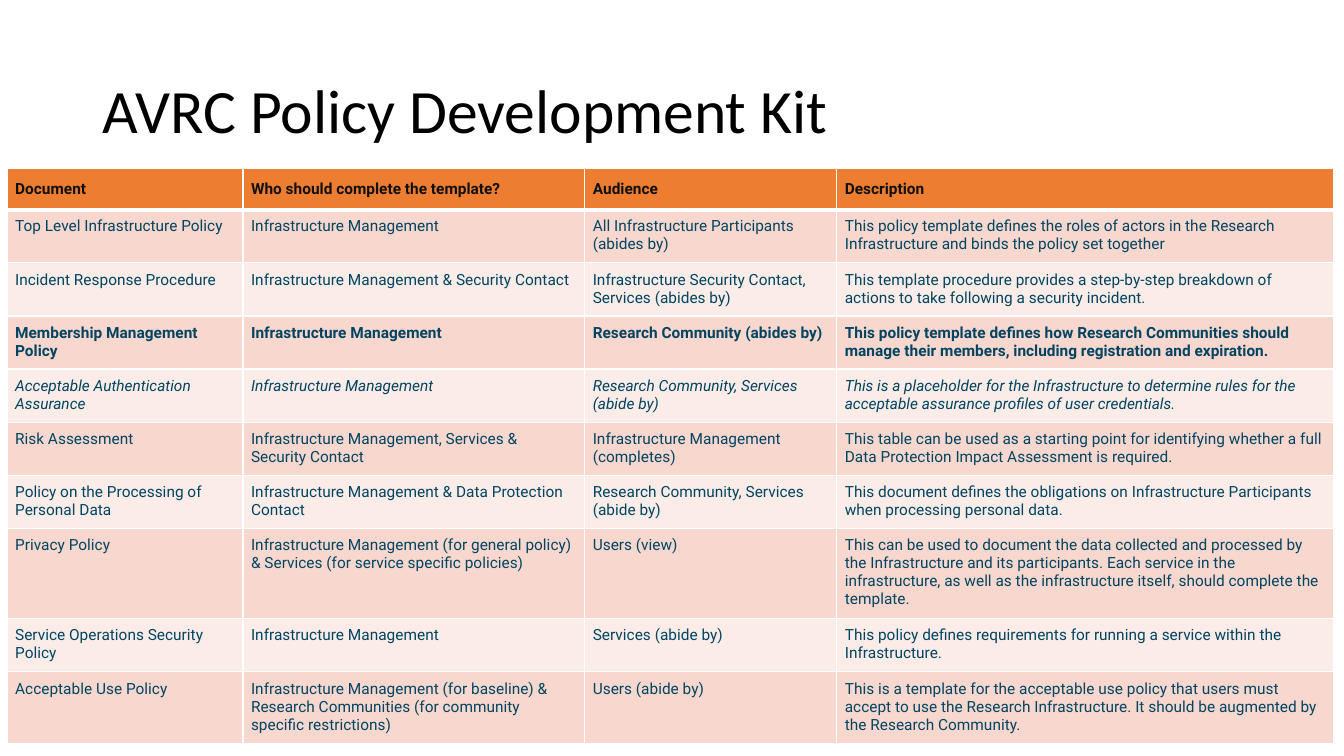
from lxml.etree import SubElement as Sub
from pptx import Presentation
from pptx.dml.color import RGBColor as RGB
from pptx.enum.text import MSO_ANCHOR as Anchor
from pptx.oxml.ns import qn
from pptx.util import Inches, Pt

# Content
TITLE = "AVRC Policy Development Kit"
HEAD = ("Document", "Who should complete the template?", "Audience", "Description")
BODY = [
    ("Top Level Infrastructure Policy",
     "Infrastructure Management",
     "All Infrastructure Participants (abides by)",
     "This policy template defines the roles of actors in the Research "
     "Infrastructure and binds the policy set together"),
    ("Incident Response Procedure",
     "Infrastructure Management & Security Contact",
     "Infrastructure Security Contact, Services (abides by)",
     "This template procedure provides a step-by-step breakdown of actions "
     "to take following a security incident."),
    ("Membership Management Policy",
     "Infrastructure Management",
     "Research Community (abides by)",
     "This policy template defines how Research Communities should manage "
     "their members, including registration and expiration."),
    ("Acceptable Authentication Assurance",
     "Infrastructure Management",
     "Research Community, Services (abide by)",
     "This is a placeholder for the Infrastructure to determine rules for the "
     "acceptable assurance profiles of user credentials."),
    ("Risk Assessment",
     "Infrastructure Management, Services & Security Contact",
     "Infrastructure Management (completes)",
     "This table can be used as a starting point for identifying whether a "
     "full Data Protection Impact Assessment is required."),
    ("Policy on the Processing of Personal Data",
     "Infrastructure Management & Data Protection Contact",
     "Research Community, Services (abide by)",
     "This document defines the obligations on Infrastructure Participants "
     "when processing personal data."),
    ("Privacy Policy",
     "Infrastructure Management (for general policy) & Services "
     "(for service specific policies)",
     "Users (view)",
     "This can be used to document the data collected and processed by the "
     "Infrastructure and its participants. Each service in the "
     "infrastructure, as well as the infrastructure itself, should complete "
     "the template."),
    ("Service Operations Security Policy",
     "Infrastructure Management",
     "Services (abide by)",
     "This policy defines requirements for running a service within the "
     "Infrastructure."),
    ("Acceptable Use Policy",
     "Infrastructure Management (for baseline) & Research Communities "
     "(for community specific restrictions)",
     "Users (abide by)",
     "This is a template for the acceptable use policy that users must accept "
     "to use the Research Infrastructure. It should be augmented by the "
     "Research Community."),
]
BOLD, ITALIC = {0, 3}, {4}  # table rows, header is 0
WIDTHS = (2.34, 3.39, 2.5, 4.93)
ROW, PAD, WIDE = 0.41, 0.08, 0.21

THEME = {
    "title": {"name": "Calibri", "size": Pt(44)},
    "cell": {"name": "Roboto", "size": Pt(11)},
    "black": "000000", "dark": "111111", "text": "004461",
    "head": "ED7D31", "bands": ("FCECE8", "F8D7CE"), "line": "FFFFFF",
}


def style(item, values):
    for key, val in values.items():
        setattr(item, key, val)


def write(frame, text, font, color):
    run = frame.paragraphs[0].add_run()
    run.text = text
    style(run.font, font)
    run.font.color.rgb = RGB.from_string(color)


def border(cell, widths):
    props = cell._tc.get_or_add_tcPr()
    for side, width in widths.items():
        line = Sub(props, qn(f"a:ln{side}"), w=str(Pt(width)))
        fill = Sub(line, qn("a:solidFill"))
        Sub(fill, qn("a:srgbClr"), val=THEME["line"])


deck = Presentation()
style(deck, {"slide_width": Inches(13.33), "slide_height": Inches(7.5)})
slide = deck.slides.add_slide(deck.slide_layouts[6])

# Title
box = slide.shapes.add_textbox(Inches(0.92), Inches(0.4), Inches(11.5), Inches(1.45))
style(box.text_frame, {"word_wrap": True, "vertical_anchor": Anchor.MIDDLE})
box.text_frame.paragraphs[0].line_spacing = 0.9
write(box.text_frame, TITLE, THEME["title"], THEME["black"])

# Policy table
rows = [HEAD, *BODY]
table = slide.shapes.add_table(
    len(rows), len(HEAD), Inches(0.07), Inches(1.67),
    Inches(sum(WIDTHS)), Inches(ROW * len(rows))).table
for col, width in zip(table.columns, WIDTHS):
    col.width = Inches(width)

for r, texts in enumerate(rows):
    table.rows[r].height = Inches(ROW)
    top = r == 0
    font = {**THEME["cell"], "bold": r in BOLD, "italic": r in ITALIC}
    for c, text in enumerate(texts):
        cell = table.cell(r, c)
        style(cell, {
            "margin_left": Inches(PAD), "margin_top": Inches(PAD),
            "margin_right": Inches(WIDE if top else PAD),
            "margin_bottom": Inches(PAD),
            "vertical_anchor": Anchor.MIDDLE if top else Anchor.TOP,
        })
        border(cell, {"L": 1, "R": 1, "T": 3 if r == 1 else 1, "B": 3 if top else 1})
        cell.fill.solid()
        cell.fill.fore_color.rgb = RGB.from_string(
            THEME["head"] if top else THEME["bands"][r % 2])
        write(cell.text_frame, text, font, THEME["dark" if top else "text"])

deck.save("out.pptx")
